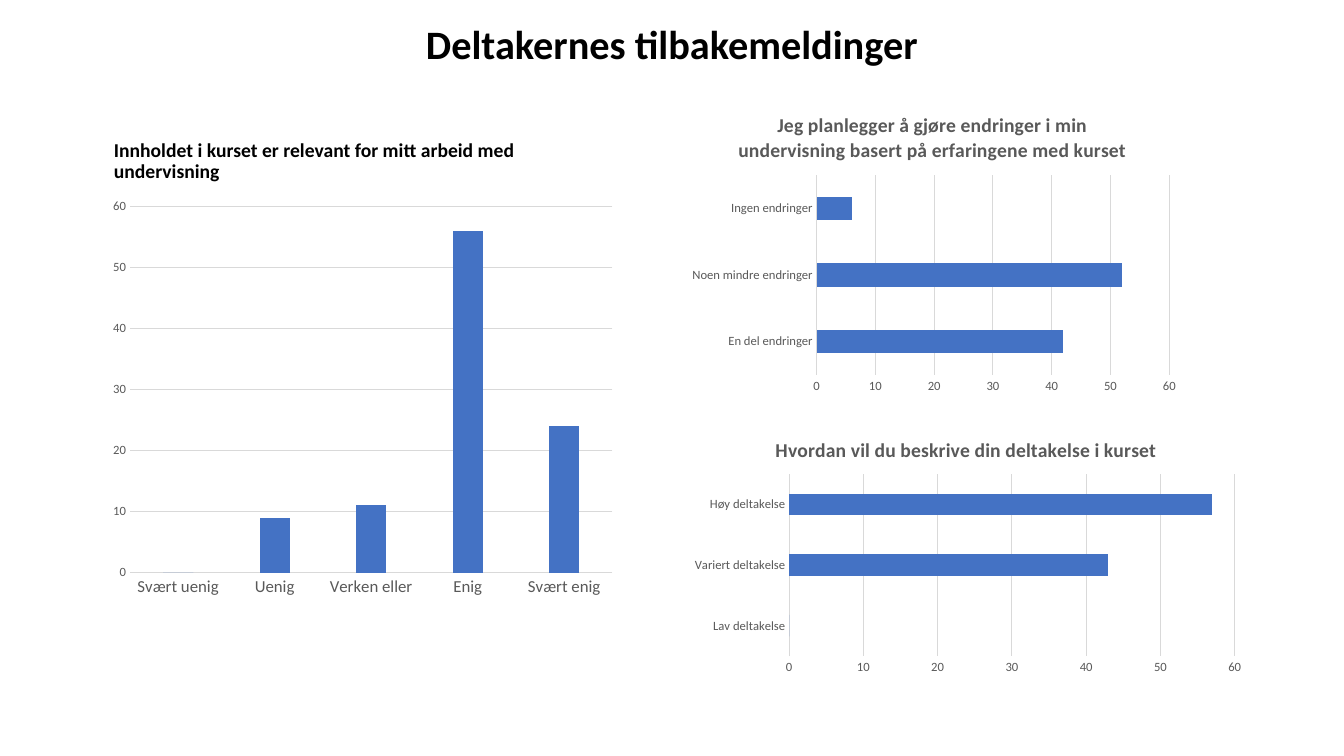
from lxml import etree
from pptx import Presentation
from pptx.chart.data import CategoryChartData
from pptx.dml.color import RGBColor
from pptx.enum.chart import XL_CHART_TYPE as ChartType, XL_TICK_MARK as TickMark
from pptx.enum.text import MSO_ANCHOR as Anchor, PP_ALIGN as Align
from pptx.oxml import parse_xml
from pptx.oxml.ns import nsdecls, qn
from pptx.util import Cm, Pt

FONT = "Calibri"
COLORS = {
    "text": "000000",
    "label": "595959",
    "grid": "D9D9D9",
    "bar": "4472C4",
}


def color(name):
    return RGBColor.from_string(COLORS[name])


def write(frame, text, size, fill="text", bold=True, align=Align.LEFT,
          anchor=None, spacing=None, before=None):
    """Put one formatted paragraph into a text frame."""
    paragraph = frame.paragraphs[0]
    paragraph.alignment = align
    paragraph.line_spacing = spacing
    paragraph.space_before = before
    if anchor is not None:
        frame.word_wrap = True
        frame.vertical_anchor = anchor
    run = paragraph.add_run()
    run.text = text
    run.font.name = FONT
    run.font.size = Pt(size)
    run.font.bold = bold
    run.font.color.rgb = color(fill)


deck = Presentation()
deck.slide_width, deck.slide_height = Cm(33.87), Cm(19.05)
slide = deck.slides.add_slide(deck.slide_layouts[6])

heading = slide.shapes.add_textbox(Cm(2.33), Cm(0.48), Cm(29.21), Cm(1.37))
write(heading.text_frame, "Deltakernes tilbakemeldinger", 28.8,
      align=Align.CENTER, anchor=Anchor.MIDDLE, spacing=0.9)

relevance_heading = slide.shapes.add_textbox(Cm(2.62), Cm(2.95), Cm(13.08), Cm(1.78))
write(relevance_heading.text_frame,
      "Innholdet i kurset er relevant for mitt arbeid med undervisning", 14,
      anchor=Anchor.BOTTOM, spacing=0.9, before=Pt(10))

# "plot" holds left, top, width and height as shares of the chart area
questions = [
    dict(kind=ChartType.COLUMN_CLUSTERED, title=None,
         box=(2.62, 4.78, 13.08, 10.49), plot=(0.05, 0.04, 0.93, 0.88),
         answers={"Svært uenig": 0, "Uenig": 9, "Verken eller": 11,
                  "Enig": 56, "Svært enig": 24},
         gap=219, overlap=-27, label_size=12),
    dict(kind=ChartType.BAR_CLUSTERED,
         title="Jeg planlegger å gjøre endringer i min undervisning "
               "basert på erfaringene med kurset",
         box=(17.15, 2.44, 12.7, 7.62), plot=(0.27, 0.26, 0.7, 0.66),
         answers={"En del endringer": 42, "Noen mindre endringer": 52,
                  "Ingen endringer": 6},
         gap=182, overlap=0, label_size=9),
    dict(kind=ChartType.BAR_CLUSTERED,
         title="Hvordan vil du beskrive din deltakelse i kurset",
         box=(17.15, 10.64, 14.4, 6.55), plot=(0.19, 0.2, 0.78, 0.7),
         answers={"Lav deltakelse": 0, "Variert deltakelse": 43,
                  "Høy deltakelse": 57},
         gap=182, overlap=0, label_size=9),
]

for question in questions:
    data = CategoryChartData()
    data.categories = list(question["answers"])
    data.add_series("Series 1", list(question["answers"].values()))
    chart = slide.shapes.add_chart(
        question["kind"], *map(Cm, question["box"]), data).chart
    chart.font.name = FONT
    chart.font.size = Pt(10)
    chart.has_legend = False

    chart.has_title = question["title"] is not None
    if chart.has_title:
        write(chart.chart_title.text_frame, question["title"], 14,
              fill="label", align=Align.CENTER)
        chart.chart_title.include_in_layout = False

    bars = chart.plots[0]
    bars.vary_by_categories = False
    bars.gap_width = question["gap"]
    bars.overlap = question["overlap"]
    bar_fill = bars.series[0].format.fill
    bar_fill.solid()
    bar_fill.fore_color.rgb = color("bar")

    answer_axis, share_axis = chart.category_axis, chart.value_axis
    for axis, size in ((answer_axis, question["label_size"]), (share_axis, 9)):
        axis.major_tick_mark = axis.minor_tick_mark = TickMark.NONE
        axis.tick_labels.font.name = FONT
        axis.tick_labels.font.size = Pt(size)
        axis.tick_labels.font.color.rgb = color("label")
    share_axis.minimum_scale, share_axis.maximum_scale = 0, 60
    share_axis.major_unit = 10
    share_axis.has_major_gridlines = True
    share_axis.format.line.fill.background()
    for line in (answer_axis.format.line, share_axis.major_gridlines.format.line):
        line.color.rgb = color("grid")
        line.width = Pt(0.75)

    plot_area = bars._element.getparent()
    for old_layout in plot_area.findall(qn("c:layout")):
        plot_area.remove(old_layout)
    layout = parse_xml(f"<c:layout {nsdecls('c')}><c:manualLayout/></c:layout>")
    settings = [("layoutTarget", "inner"), ("xMode", "edge"), ("yMode", "edge")]
    settings += zip("xywh", question["plot"])
    for tag, value in settings:
        etree.SubElement(layout[0], qn(f"c:{tag}")).set("val", str(value))
    plot_area.insert(0, layout)

deck.save("out.pptx")
